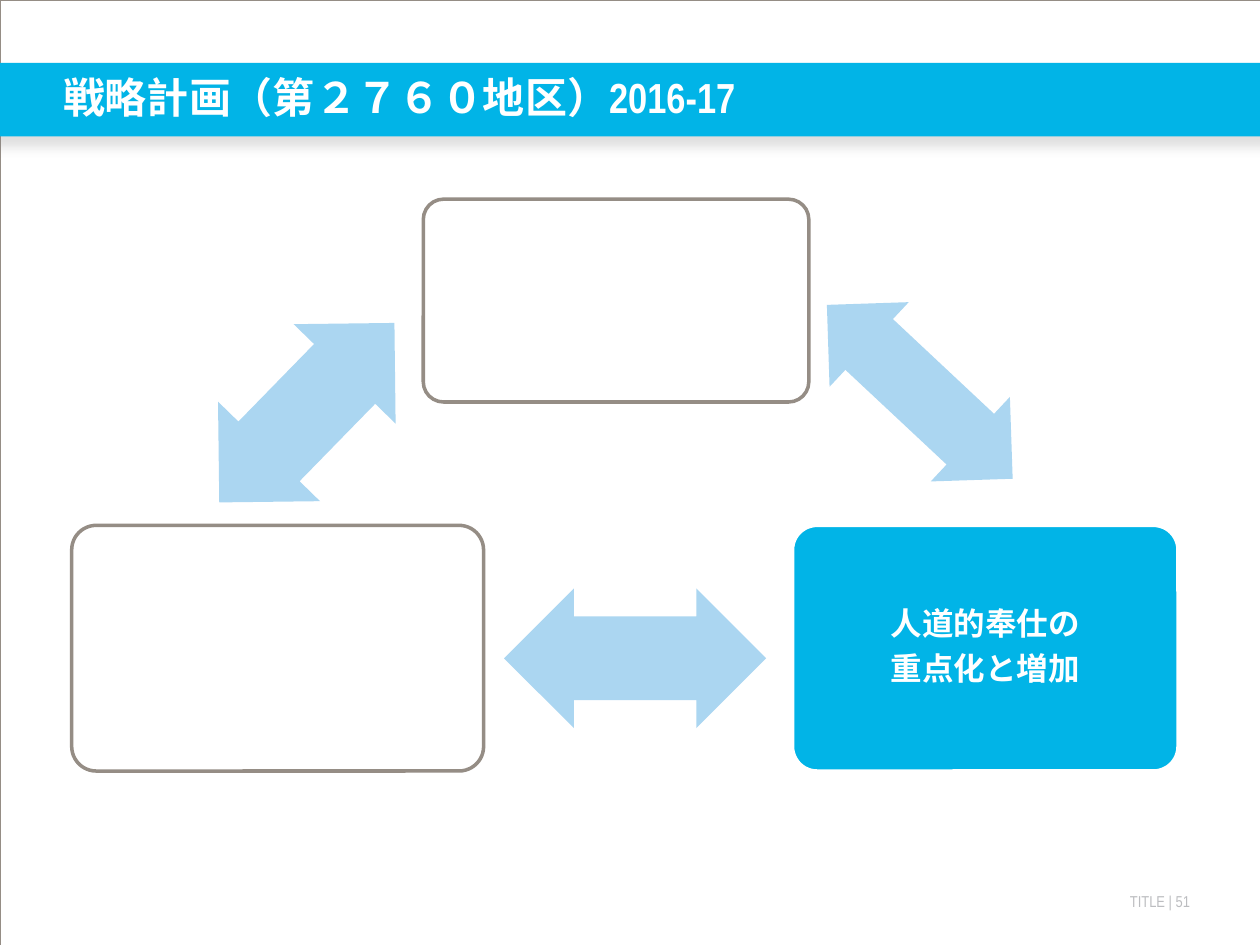
from lxml.etree import fromstring
from pptx import Presentation
from pptx.dml.color import RGBColor
from pptx.enum.shapes import MSO_SHAPE
from pptx.enum.text import MSO_ANCHOR, PP_ALIGN
from pptx.util import Pt

BLUE, PALE, GREY, WHITE = "01B4E7", "ABD6F1", "958D85", "FFFFFF"


def add_shape(kind, left, top, width, height, fill=None, line=None, weight=2):
    shape = page.shapes.add_shape(kind, Pt(left), Pt(top), Pt(width), Pt(height))
    shape.shadow.inherit = False
    for paint, color in ((shape.fill, fill), (shape.line.fill, line)):
        if color:
            paint.solid()
            paint.fore_color.rgb = RGBColor.from_string(color)
        else:
            paint.background()
    if line:
        shape.line.width = Pt(weight)
    return shape


def write(box, lines, size, color, font="Arial Narrow", bold=False,
          align=PP_ALIGN.LEFT, anchor=MSO_ANCHOR.TOP, margin=0, spacing=1, after=0):
    frame = box.text_frame
    frame.word_wrap = True
    frame.vertical_anchor = anchor
    frame.margin_left = frame.margin_right = Pt(margin)
    frame.margin_top = frame.margin_bottom = Pt(margin)
    for index, line in enumerate(lines):
        para = frame.add_paragraph() if index else frame.paragraphs[0]
        para.alignment = align
        para.line_spacing = spacing
        para.space_before = Pt(0)
        para.space_after = Pt(after)
        span = para.add_run()
        span.text = line
        span.font.size = Pt(size)
        span.font.name = font
        span.font.bold = bold
        span.font.color.rgb = RGBColor.from_string(color)


deck = Presentation()
deck.slide_width, deck.slide_height = Pt(720), Pt(540)
page = deck.slides.add_slide(deck.slide_layouts[5])

footer = page.shapes.add_textbox(Pt(558), Pt(509.8), Pt(122), Pt(10.8))
write(footer, ["TITLE | 51"], 9, "BCBDC0", align=PP_ALIGN.RIGHT)

add_shape(MSO_SHAPE.RECTANGLE, 0, 0, 720, 540, line=GREY, weight=0.13)
band = add_shape(MSO_SHAPE.RECTANGLE, -6, 36, 732, 42, fill=BLUE)
effects = band.element.spPr.find("{*}effectLst")
effects.append(fromstring(
    '<a:outerShdw xmlns:a="http://schemas.openxmlformats.org/drawingml/2006/main" '
    f'blurRad="{Pt(7)}" dist="{Pt(4.8)}" dir="5400000" rotWithShape="0">'
    '<a:srgbClr val="808080"><a:alpha val="25000"/></a:srgbClr></a:outerShdw>'))

title = page.shapes.title
title.left, title.top, title.width, title.height = Pt(36), Pt(46), Pt(690), Pt(18)
title.element.getparent().append(title.element)
write(title, ["戦略計画（第２７６０地区）2016-17"], 24, WHITE, bold=True,
      anchor=MSO_ANCHOR.MIDDLE)

cards = [
    (241.9, 113.8, 220.3, 115.9, WHITE, GREY, []),
    (452.9, 300.2, 220.3, 140.4, BLUE, WHITE, ["人道的奉仕の", "重点化と増加"]),
    (41, 300.2, 235.4, 140.4, WHITE, GREY, []),
]
for left, top, width, height, fill, line, lines in cards:
    card = add_shape(MSO_SHAPE.ROUNDED_RECTANGLE, left, top, width, height, fill, line)
    card.adjustments[0] = 0.1
    write(card, lines, 18, WHITE, font="Calibri", bold=True, align=PP_ALIGN.CENTER,
          anchor=MSO_ANCHOR.MIDDLE, margin=5, spacing=0.9, after=6.3)

arrows = [
    (452.9, 190.8, 145.4, 66.2, 43.1),
    (288, 336.2, 149.8, 79.9, 180),
    (103.7, 195.1, 143.3, 81.4, 314.3),
]
for left, top, width, height, angle in arrows:
    arrow = add_shape(MSO_SHAPE.LEFT_RIGHT_ARROW, left, top, width, height, fill=PALE)
    arrow.rotation = angle
    arrow.adjustments[0] = 0.6
    arrow.adjustments[1] = 0.5

deck.save("out.pptx")
